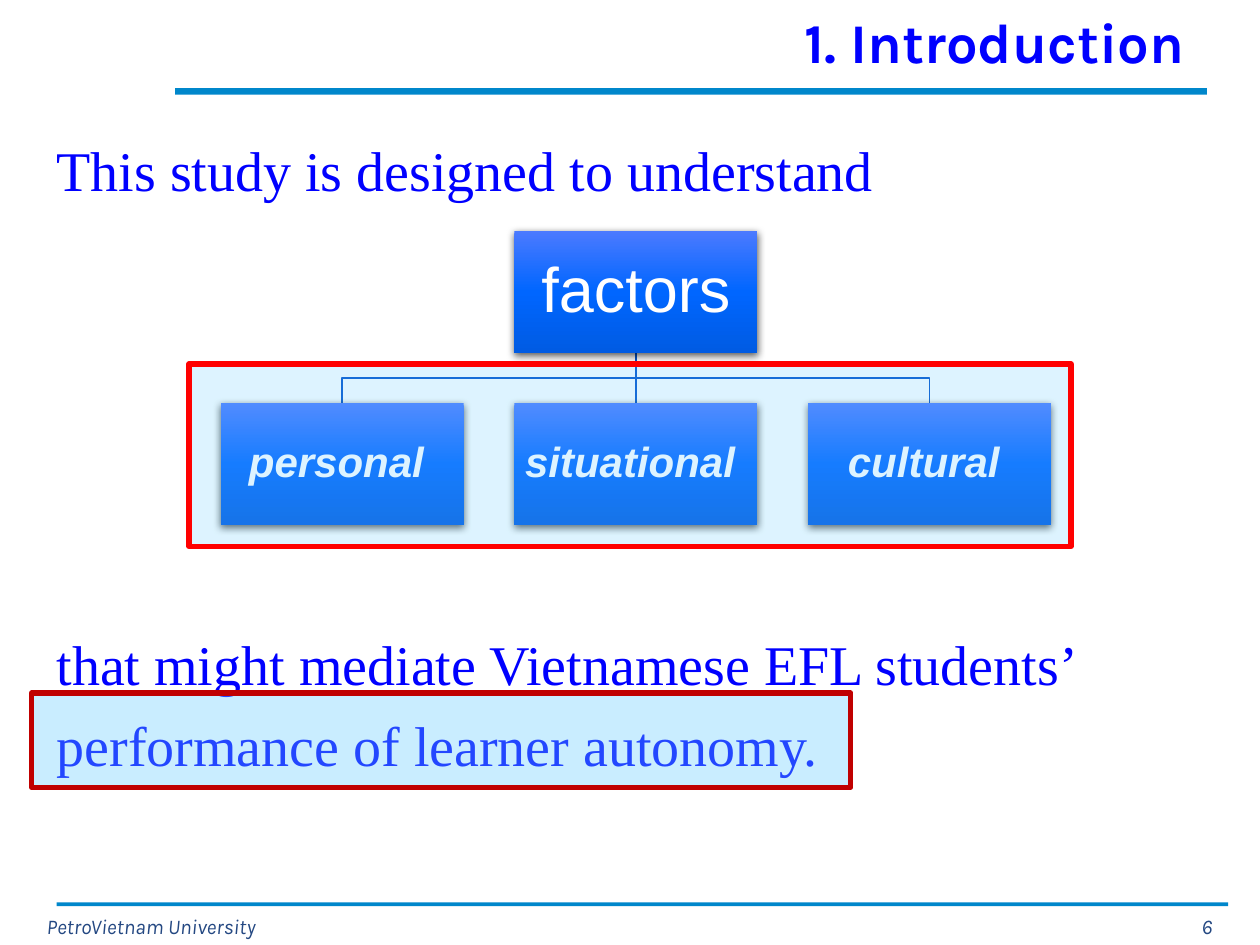
from lxml import etree
from pptx import Presentation
from pptx.dml.color import RGBColor
from pptx.enum import shapes, text
from pptx.oxml import parse_xml
from pptx.oxml.ns import nsdecls, qn
from pptx.util import Cm, Pt

NAVY, BLUE, WHITE = "244882", "0000FF", "FFFFFF"
BAR, LINK, TINT = "0087CB", "0052CC", "66CCFF"
STOPS = [(0, "4B7AFF"), (50, "0066FF"), (100, "005BE3")]
ALIGN = text.PP_ALIGN


def color(code):
    return RGBColor.from_string(code)


class Page:
    """Holds the style and the current slide."""

    def __init__(self, deck):
        self.slide = deck.slides.add_slide(deck.slide_layouts[1])
        self.shapes = self.slide.shapes

    def font(self, par, name, size, code, bold=False, slant=False):
        font = par.font
        font.name, font.size = name, Pt(size)
        font.bold, font.italic = bold, slant
        font.color.rgb = color(code)

    def place(self, item, x, y, w, h):
        item.left, item.top = Cm(x), Cm(y)
        item.width, item.height = Cm(w), Cm(h)

    def inset(self, frame, side, edge):
        frame.margin_left = frame.margin_right = Cm(side)
        frame.margin_top = frame.margin_bottom = Cm(edge)

    def title(self, words, *area):
        item = self.shapes.title
        self.place(item, *area)
        frame = item.text_frame
        frame.text = words
        frame.auto_size = text.MSO_AUTO_SIZE.NONE
        frame.vertical_anchor = text.MSO_ANCHOR.MIDDLE
        self.inset(frame, 0.25, 0.13)
        par = frame.paragraphs[0]
        par.alignment = ALIGN.RIGHT
        self.font(par, "Karla", 32, BLUE, bold=True)

    def body(self, lines, gap, *area):
        """Fill the body with unbulleted lines, gap points apart."""
        item = self.slide.placeholders[1]
        self.place(item, *area)
        frame = item.text_frame
        frame.text = "\n".join(lines)
        frame.auto_size = text.MSO_AUTO_SIZE.NONE
        frame.vertical_anchor = text.MSO_ANCHOR.TOP
        self.inset(frame, 0, 0.13)
        for i, par in enumerate(frame.paragraphs):
            props = par._p.get_or_add_pPr()
            props.set("marL", "0")
            props.set("indent", "0")
            etree.SubElement(props, qn("a:buNone"))
            par.line_spacing = 1.2
            par.space_before = Pt(gap if i else 0)
            par.space_after = Pt(10)
            self.font(par, "Times New Roman", 32, BLUE)

    def note(self, words, align, wrap, *area):
        """Add a small footer text."""
        item = self.shapes.add_textbox(*map(Cm, area))
        frame = item.text_frame
        frame.text, frame.word_wrap = words, wrap
        frame.vertical_anchor = text.MSO_ANCHOR.MIDDLE
        par = frame.paragraphs[0]
        par.alignment = align
        self.font(par, "Karla", 12, NAVY, slant=True)

    def rect(self, *area):
        item = self.shapes.add_shape(
            shapes.MSO_SHAPE.RECTANGLE, *map(Cm, area))
        item.shadow.inherit = False
        item.line.fill.background()
        return item

    def bar(self, *area):
        fill = self.rect(*area).fill
        fill.solid()
        fill.fore_color.rgb = color(BAR)

    def frame(self, edge, alpha, *area):
        """Add a see-through highlight, alpha percent opaque."""
        item = self.rect(*area)
        item.fill.solid()
        item.fill.fore_color.rgb = color(TINT)
        tint = next(item._element.spPr.iter(qn("a:srgbClr")))
        etree.SubElement(tint, qn("a:alpha"), val=str(alpha * 1000))
        item.line.color.rgb = color(edge)
        item.line.width = Pt(3)

    def box(self, words, size, strong, *area):
        """Add a shaded, shadowed box with a label."""
        item = self.rect(*area)
        props = item._element.spPr
        stops = "".join(
            f'<a:gs pos="{at * 1000}"><a:srgbClr val="{code}"/></a:gs>'
            for at, code in STOPS)
        props.insert(2, parse_xml(
            f'<a:gradFill {nsdecls("a")} rotWithShape="1">'
            f'<a:gsLst>{stops}</a:gsLst>'
            '<a:lin ang="5400000" scaled="0"/></a:gradFill>'))
        props.find(qn("a:effectLst")).append(parse_xml(
            f'<a:outerShdw {nsdecls("a")} blurRad="{Pt(4.5)}" '
            f'dist="{Pt(1.5)}" dir="5400000" rotWithShape="0">'
            '<a:srgbClr val="000000"><a:alpha val="63000"/></a:srgbClr>'
            '</a:outerShdw>'))
        frame = item.text_frame
        frame.text, frame.word_wrap = words, True
        frame.vertical_anchor = text.MSO_ANCHOR.MIDDLE
        self.inset(frame, 0.05, 0.05)
        par = frame.paragraphs[0]
        par.alignment, par.line_spacing = ALIGN.CENTER, 0.9
        self.font(par, "Arial", size, WHITE, strong, strong)

    def link(self, x, y, end, foot):
        """Draw a line from a parent down to a child."""
        if x == end:
            item = self.shapes.add_connector(
                shapes.MSO_CONNECTOR.STRAIGHT, *map(Cm, (x, y, end, foot)))
            etree.SubElement(item._element.spPr, qn("a:effectLst"))
        else:
            mid = (y + foot) / 2
            path = self.shapes.build_freeform(Cm(x), Cm(y))
            path.add_line_segments(
                [(Cm(a), Cm(b)) for a, b in
                 ((x, mid), (end, mid), (end, foot))], close=False)
            item = path.convert_to_shape()
            item.shadow.inherit = False
            item.fill.background()
        item.line.color.rgb = color(LINK)
        item.line.width = Pt(1)

    def tree(self, root, kids, x, y, w, h, pitch, drop):
        """Draw a root box centred over a row of child boxes."""
        lefts = [x + pitch * i for i in range(len(kids))]
        top = x + pitch * (len(kids) - 1) / 2
        for left in lefts:
            self.link(top + w / 2, y + h, left + w / 2, y + drop)
        self.box(root, 36, False, top, y, w, h)
        for kid, left in zip(kids, lefts):
            self.box(kid, 24, True, left, y + drop, w, h)


def main():
    deck = Presentation()
    deck.slide_width, deck.slide_height = Cm(25.4), Cm(19.05)
    page = Page(deck)
    page.bar(3.53, 1.78, 20.8, 0.13)
    page.bar(1.14, 18.19, 23.62, 0.08)
    page.note("PetroVietnam University", ALIGN.LEFT, False,
              0.69, 18.29, 5.03, 0.76)
    page.title("1. Introduction", 3.48, -0.13, 20.65, 1.93)
    page.body(["This study is designed to understand",
               "that might mediate Vietnamese EFL students’ "
               "performance of learner autonomy."],
              226, 1.14, 2.34, 23.62, 15.67)
    page.note("6", ALIGN.RIGHT, True, 22.66, 18.29, 2.03, 0.76)
    page.tree("factors", ["personal ", "situational ", "cultural "],
              4.45, 4.66, 4.9, 2.45, 5.92, 3.47)
    page.frame("C00000", 35, 0.64, 13.97, 16.51, 1.9)
    page.frame("FF0000", 22, 3.81, 7.34, 17.78, 3.68)
    deck.save("out.pptx")


if __name__ == "__main__":
    main()
